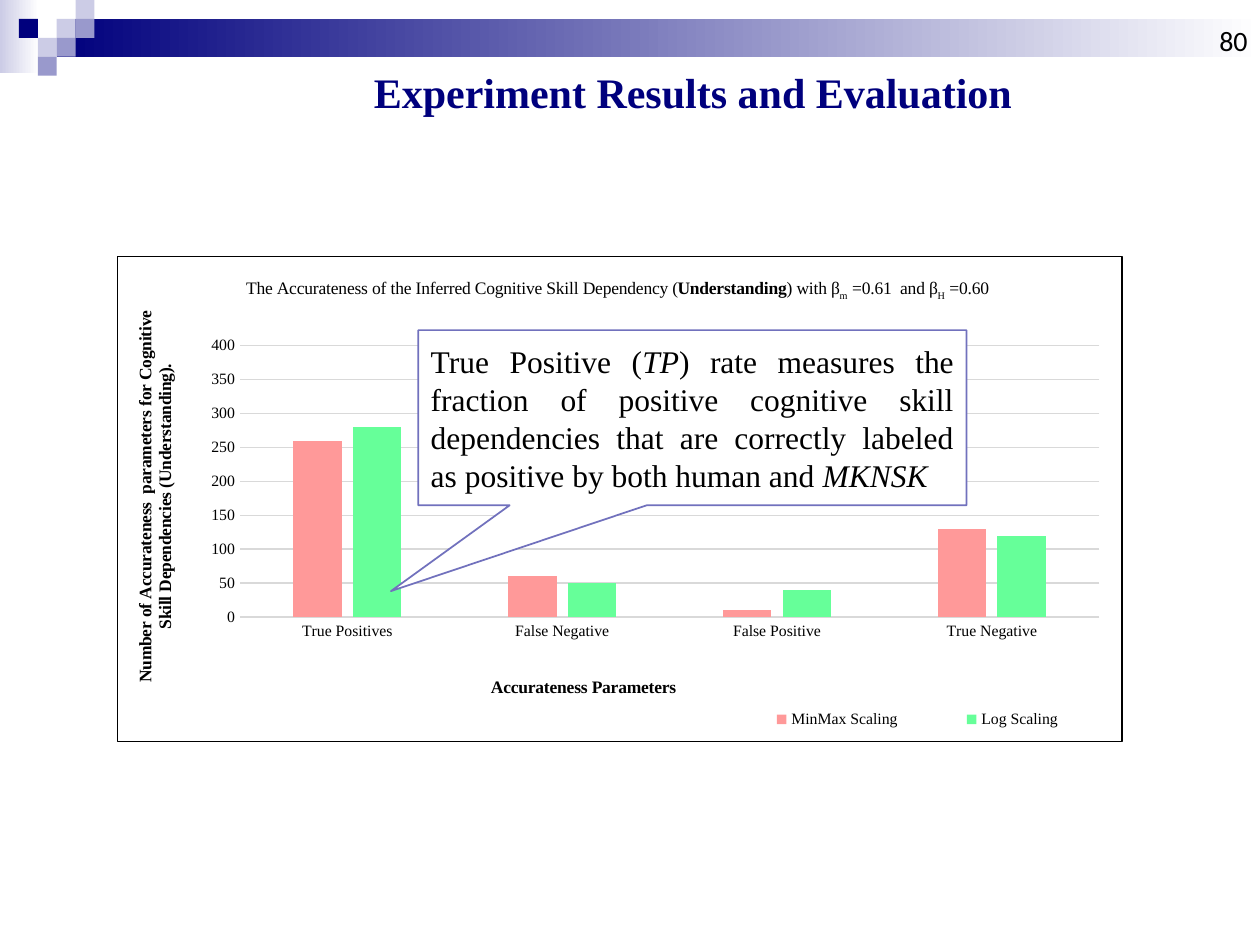
from dataclasses import dataclass
from typing import Any, Optional

from lxml import etree
from pptx import Presentation
from pptx.chart.data import CategoryChartData
from pptx.dml.color import RGBColor
from pptx.enum.chart import XL_CHART_TYPE, XL_LEGEND_POSITION, XL_TICK_MARK
from pptx.enum.shapes import MSO_SHAPE
from pptx.enum.text import MSO_ANCHOR, PP_ALIGN
from pptx.oxml import parse_xml
from pptx.oxml.ns import qn
from pptx.util import Inches, Pt

RECT, CALL = MSO_SHAPE.RECTANGLE, MSO_SHAPE.RECTANGULAR_CALLOUT
MID, LOW = MSO_ANCHOR.MIDDLE, MSO_ANCHOR.BOTTOM
MID_AL, RIGHT, JUST = PP_ALIGN.CENTER, PP_ALIGN.RIGHT, PP_ALIGN.JUSTIFY
COLUMN, NO_TICK = XL_CHART_TYPE.COLUMN_CLUSTERED, XL_TICK_MARK.NONE
FOOT = XL_LEGEND_POSITION.BOTTOM

WIDE, HIGH, UNIT = 10, 7.5, 0.15
SERIF = "Times New Roman"
HUES = {"navy": "00007D", "pale": "CCCCE6", "mid": "9999CC", "edge": "7171BD",
        "white": "FFFFFF", "black": "000000", "grid": "D9D9D9",
        "pink": "FF9999", "green": "66FF99"}


@dataclass
class Box:
    x: float
    y: float
    w: float
    h: float

    def emu(self) -> list:
        return [Inches(v) for v in (self.x, self.y, self.w, self.h)]


@dataclass
class Tile:
    col: int
    row: int
    hue: str


@dataclass
class Run:
    text: str
    bold: bool = False
    slant: bool = False
    sub: bool = False


AREA = Box(0.93, 2.03, 7.98, 3.86)
TILES = [Tile(3, 1, "pale"), Tile(4, 0, "pale"), Tile(4, 1, "mid"),
         Tile(2, 2, "pale"), Tile(1, 1, "navy"), Tile(3, 2, "mid"),
         Tile(2, 3, "mid")]
GROUPS = ["True Positives", "False Negative", "False Positive", "True Negative"]
SERIES = [("MinMax Scaling ", (260, 60, 10, 130), "pink"),
          ("Log Scaling", (280, 50, 40, 120), "green")]


def tint(key: str) -> RGBColor:
    return RGBColor.from_string(HUES[key])


def style(font: Any, size: float, hue: str = "black", **more: Any) -> None:
    look = {"name": SERIF, "size": Pt(size), "bold": False, **more}
    for key, value in look.items():
        setattr(font, key, value)
    font.color.rgb = tint(hue)


def write(frame: Any, runs: list[Run], size: float, hue: str = "black",
          align: Optional[PP_ALIGN] = None, face: str = SERIF) -> None:
    para = frame.paragraphs[0]
    if align is not None:
        para.alignment = align
    for part in runs:
        run = para.add_run()
        run.text = part.text
        style(run.font, size, hue, name=face, bold=part.bold, italic=part.slant)
        if part.sub:
            run.font._element.set("baseline", "-25000")


def block(slide: Any, box: Box, hue: str, fade: bool = False,
          kind: MSO_SHAPE = RECT) -> Any:
    shape = slide.shapes.add_shape(kind, *box.emu())
    shape.shadow.inherit = False
    shape.line.fill.background()
    if fade:
        shape.fill.gradient()
        shape.fill.gradient_angle = 0
        for stop, key in zip(shape.fill.gradient_stops, (hue, "white")):
            stop.color.rgb = tint(key)
    else:
        shape.fill.solid()
        shape.fill.fore_color.rgb = tint(hue)
    return shape


def label(slide: Any, box: Box, anchor: MSO_ANCHOR) -> Any:
    frame = slide.shapes.add_textbox(*box.emu()).text_frame
    frame.word_wrap = True
    frame.vertical_anchor = anchor
    return frame


def place(part: Any, after: Optional[str], x: float, y: float,
          w: float = 0, h: float = 0, inner: bool = False) -> None:
    """Set a chart part, in inches from the chart's corner."""
    for old in part.findall(qn("c:layout")):
        part.remove(old)
    outer = etree.Element(qn("c:layout"))
    spot = etree.SubElement(outer, qn("c:manualLayout"))
    marks = [("layoutTarget", "inner")] if inner else []
    marks += [("xMode", "edge"), ("yMode", "edge")]
    marks += [("x", x / AREA.w), ("y", y / AREA.h)]
    marks += [("w", w / AREA.w), ("h", h / AREA.h)] if w else []
    for tag, value in marks:
        etree.SubElement(spot, qn("c:" + tag)).set("val", str(value))
    if after:
        part.find(qn(after)).addnext(outer)
    else:
        part.insert(0, outer)


def head(title: Any, runs: list[Run], x: float, y: float) -> None:
    write(title.text_frame, runs, 10)
    place(title._element, "c:tx", x, y)


def frame_chart(chart: Any) -> None:
    space = chart._chartSpace
    space.find(qn("c:chart")).addnext(parse_xml(
        '<c:spPr xmlns:c="http://schemas.openxmlformats.org/drawingml/2006/chart"'
        ' xmlns:a="http://schemas.openxmlformats.org/drawingml/2006/main">'
        f'<a:solidFill><a:srgbClr val="{HUES["white"]}"/></a:solidFill>'
        f'<a:ln w="{Pt(0.75)}"><a:solidFill><a:srgbClr val="{HUES["black"]}"/>'
        '</a:solidFill></a:ln></c:spPr>'))


def draw_chart(slide: Any) -> None:
    data = CategoryChartData()
    data.categories = GROUPS
    for name, vals, _ in SERIES:
        data.add_series(name, vals)
    chart = slide.shapes.add_chart(COLUMN, *AREA.emu(), data).chart
    style(chart.font, 10)
    frame_chart(chart)

    # Columns
    plot = chart.plots[0]
    plot.gap_width, plot.overlap, plot.vary_by_categories = 221, -23, False
    for bars, (_, _, hue) in zip(plot.series, SERIES):
        bars.format.fill.solid()
        bars.format.fill.fore_color.rgb = tint(hue)
    place(chart._chartSpace.chart.plotArea, None, 0.97, 0.71, 6.83, 2.16, True)

    # Axes
    cat, val = chart.category_axis, chart.value_axis
    for axis in (cat, val):
        axis.major_tick_mark = axis.minor_tick_mark = NO_TICK
        style(axis.tick_labels.font, 9)
    val.minimum_scale, val.maximum_scale, val.major_unit = 0, 400, 50
    val.format.line.fill.background()
    for line in (cat.format.line, val.major_gridlines.format.line):
        line.color.rgb = tint("grid")
        line.width = Pt(0.75)

    # Titles
    head(chart.chart_title, [
        Run("The Accurateness of the Inferred Cognitive Skill Dependency ("),
        Run("Understanding", bold=True), Run(") with β"), Run("m", sub=True),
        Run(" =0.61  and β"), Run("H", sub=True), Run(" =0.60")], 0.99, 0.13)
    head(cat.axis_title, [Run("Accurateness Parameters", bold=True)], 2.94, 3.31)
    head(val.axis_title, [Run(
        "Number of Accurateness  parameters for Cognitive "
        "Skill Dependencies (Understanding).", bold=True)], 0.1, 0.41)

    # Legend
    chart.has_legend = True
    legend = chart.legend
    legend.position, legend.include_in_layout = FOOT, False
    style(legend.font, 9)
    place(legend._element, "c:legendPos", 4.76, 3.55, 3.19, 0.27)


def main() -> None:
    deck = Presentation()
    deck.slide_width, deck.slide_height = Inches(WIDE), Inches(HIGH)
    slide = deck.slides.add_slide(deck.slide_layouts[6])

    # Banner
    block(slide, Box(0, 0, 0.31, 0.58), "pale", fade=True)
    block(slide, Box(3 * UNIT, UNIT, WIDE - 3 * UNIT, 2 * UNIT), "navy", fade=True)
    for tile in TILES:
        block(slide, Box(tile.col * UNIT, tile.row * UNIT, UNIT, UNIT), tile.hue)

    draw_chart(slide)

    # Page number and title
    page = label(slide, Box(7.67, 0, 2.33, 0.5), LOW)
    write(page, [Run("80")], 16, align=RIGHT, face="Calibri")
    title = label(slide, Box(1.51, 0.5, 7.98, 0.5), MID)
    write(title, [Run("Experiment Results and Evaluation", bold=True)], 24,
          "navy", MID_AL)
    title.paragraphs[0].line_spacing = 0.93

    # Callout
    note = block(slide, Box(3.32, 2.62, 4.35, 1.39), "white", kind=CALL)
    note.adjustments[0], note.adjustments[1] = -0.55, 0.99
    note.line.color.rgb = tint("edge")
    note.line.width = Pt(1)
    note.text_frame.word_wrap = True
    note.text_frame.vertical_anchor = MID
    write(note.text_frame, [
        Run("True Positive ("), Run("TP", slant=True),
        Run(") rate measures the fraction of positive cognitive skill "
            "dependencies that are correctly labeled as positive by both "
            "human and "), Run("MKNSK", slant=True)], 18, align=JUST)

    deck.save("out.pptx")


if __name__ == "__main__":
    main()
